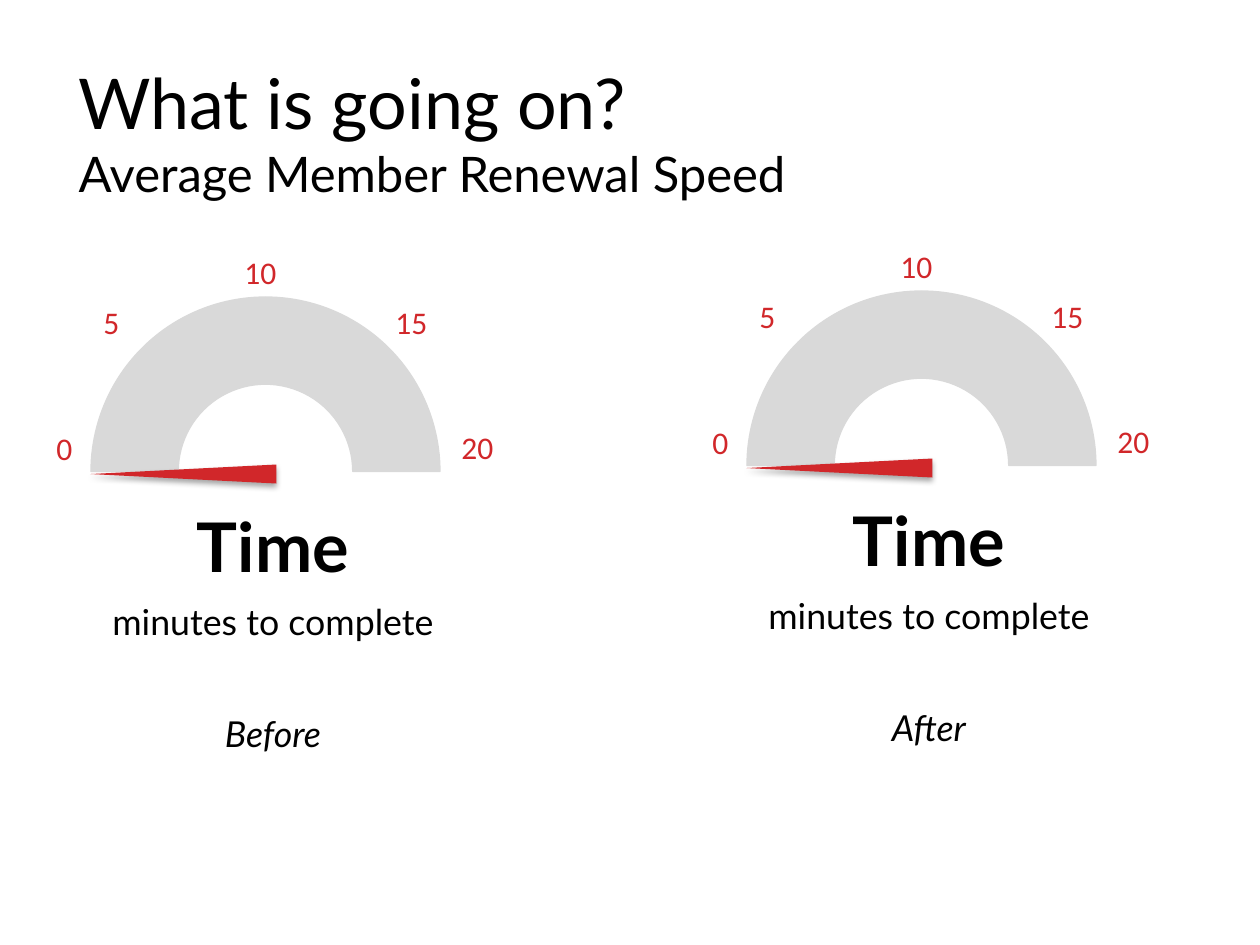
import pptx
import pptx.util
import pptx.dml.color
import pptx.enum.shapes
import pptx.enum.text
import pptx.oxml

EMU_PER_PX = 914400 // 126
COLORS = {"text": "000000", "dial": "D9D9D9", "accent": "D1272A"}
ARC_SIZE = 349
# Tick label, then its left, top and width relative to the dial
TICKS = [
    ("0", -47, 126, 42),
    ("5", 0, 0, 42),
    ("10", 141, -50, 58),
    ("15", 292, 0, 58),
    ("20", 358, 125, 58),
]
# Dial left, top and caption
GAUGES = [(91, 297, "Before"), (747, 291, "After")]
SHADOW = (
    '<a:outerShdw xmlns:a="http://schemas.openxmlformats.org/drawingml/2006/main" '
    'blurRad="40000" dist="23000" dir="5400000" rotWithShape="0">'
    '<a:srgbClr val="000000"><a:alpha val="35000"/></a:srgbClr></a:outerShdw>'
)


def px(*lengths):
    return [pptx.util.Emu(length * EMU_PER_PX) for length in lengths]


def rgb(name):
    return pptx.dml.color.RGBColor.from_string(COLORS[name])


def add_text(para, text, size, font="Lato", color="text", bold=False, italic=False):
    span = para.add_run()
    span.text = text
    span.font.name = font
    span.font.size = pptx.util.Pt(size)
    span.font.bold = bold
    span.font.italic = italic
    span.font.color.rgb = rgb(color)


def add_filled_shape(page, kind, bounds, color):
    shape = page.shapes.add_shape(kind, *px(*bounds))
    shape.shadow.inherit = False
    shape.fill.solid()
    shape.fill.fore_color.rgb = rgb(color)
    return shape


def add_title(page, left, top, width, height):
    title = page.shapes.title
    title.left, title.top, title.width, title.height = px(left, top, width, height)
    frame = title.text_frame
    frame.auto_size = pptx.enum.text.MSO_AUTO_SIZE.NONE
    frame.vertical_anchor = pptx.enum.text.MSO_ANCHOR.MIDDLE
    para = frame.paragraphs[0]
    para.alignment = pptx.enum.text.PP_ALIGN.LEFT
    add_text(para, "What is going on?", 40)
    para.add_line_break()
    add_text(para, "Average Member Renewal Speed", 28)


def add_caption(page, left, top, state):
    box = page.shapes.add_textbox(*px(left, top, 352, 276))
    frame = box.text_frame
    frame.word_wrap = True
    lines = [
        ("Time", 0, {"size": 39.1, "bold": True}),
        ("minutes to complete", 5, {"size": 20.4}),
        (state, 37, {"size": 20.4, "italic": True}),
    ]
    for index, (text, gap, style) in enumerate(lines):
        para = frame.add_paragraph() if index else frame.paragraphs[0]
        para.alignment = pptx.enum.text.PP_ALIGN.CENTER
        para.line_spacing = 1.1
        para.space_before = pptx.util.Pt(gap)
        add_text(para, text, **style)


def add_gauge(page, left, top, state):
    kinds = pptx.enum.shapes.MSO_SHAPE
    add_caption(page, left + 6, top + 193, state)

    # Dial
    dial = add_filled_shape(page, kinds.BLOCK_ARC, (left, top, ARC_SIZE, ARC_SIZE), "dial")
    dial.line.color.rgb = rgb("dial")
    dial.line.width = pptx.util.Pt(0.75)

    # Needle, pointing at zero
    needle = add_filled_shape(
        page, kinds.ISOSCELES_TRIANGLE, (left + 83, top + 84, 19, 186), "accent")
    needle.rotation = 270
    needle.line.fill.background()
    effects = needle._element.spPr.find(pptx.oxml.ns.qn("a:effectLst"))
    effects.append(pptx.oxml.parse_xml(SHADOW))

    # Scale labels
    for label, dx, dy, width in TICKS:
        box = page.shapes.add_textbox(*px(left + dx, top + dy, width, 50))
        box.text_frame.word_wrap = False
        box.text_frame.auto_size = pptx.enum.text.MSO_AUTO_SIZE.SHAPE_TO_FIT_TEXT
        add_text(box.text_frame.paragraphs[0], label, 18, font="Calibri", color="accent")


def main():
    deck = pptx.Presentation()
    deck.slide_width, deck.slide_height = px(1260, 945)
    page = deck.slides.add_slide(deck.slide_layouts[5])
    add_title(page, 66, 52, 1128, 157)
    for left, top, state in GAUGES:
        add_gauge(page, left, top, state)
    deck.save("out.pptx")


if __name__ == "__main__":
    main()
